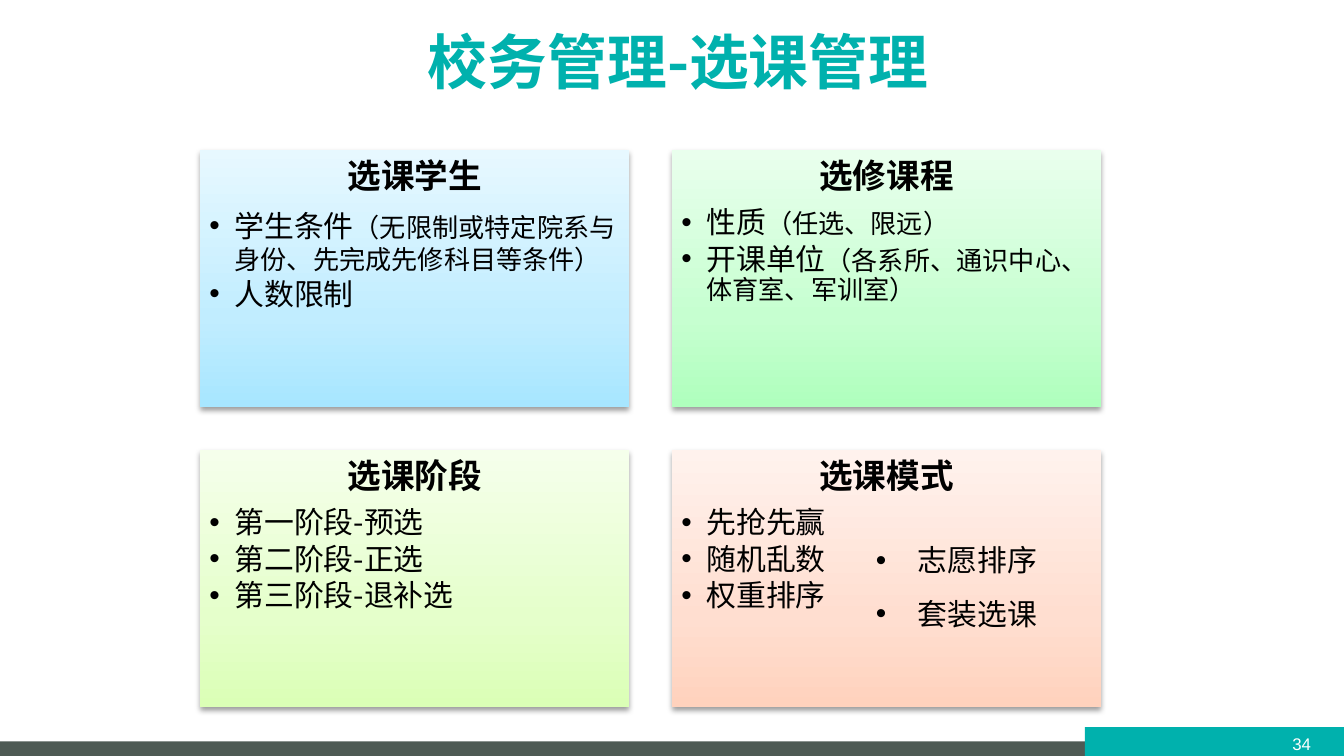
from lxml import etree
from pptx import Presentation
from pptx.dml.color import RGBColor
from pptx.enum.shapes import MSO_SHAPE
from pptx.enum.text import MSO_ANCHOR, MSO_AUTO_SIZE, PP_ALIGN
from pptx.oxml import parse_xml
from pptx.oxml.ns import nsdecls, qn
from pptx.util import Pt

RECT = MSO_SHAPE.RECTANGLE
TOP, MIDDLE = MSO_ANCHOR.TOP, MSO_ANCHOR.MIDDLE
GROW = MSO_AUTO_SIZE.SHAPE_TO_FIT_TEXT
LEFT, CENTER = PP_ALIGN.LEFT, PP_ALIGN.CENTER
SANS, LATIN = "Noto Sans CJK SC", "Arial"
TEAL, GREY, BLACK, WHITE = "00B1AD", "4E5A54", "000000", "FFFFFF"

# Heading, gradient from bottom to top, points as (term, detail)
CARDS = [
    ("选课学生", ("A7E6FF", "C1EDFF", "E7F8FF"),
     [("学生条件", "（无限制或特定院系与身份、先完成先修科目等条件）"),
      ("人数限制", "")]),
    ("选修课程", ("AFFFBD", "C6FFD0", "E9FFED"),
     [("性质", "（任选、限远）"),
      ("开课单位", "（各系所、通识中心、体育室、军训室）")]),
    ("选课阶段", ("DBFFB6", "E5FFCB", "F5FFEB"),
     [("第一阶段-预选", ""), ("第二阶段-正选", ""), ("第三阶段-退补选", "")]),
    ("选课模式", ("FFD2BD", "FFDED0", "FFF2ED"),
     [("先抢先赢", ""), ("随机乱数", ""), ("权重排序", "")]),
]
MODES = ["志愿排序", "套装选课"]


def color(code):
    return RGBColor.from_string(code)


def style(run, size, hue=BLACK, bold=False, face=SANS):
    font = run.font
    font.size, font.bold, font.name = Pt(size), bold, face
    font.color.rgb = color(hue)
    east = etree.SubElement(run._r.get_or_add_rPr(), qn("a:ea"))
    east.set("typeface", face)


def bullet(para, indent):
    props = para._p.get_or_add_pPr()
    props.set("marL", str(Pt(indent)))
    props.set("indent", str(-Pt(indent)))
    etree.SubElement(props, qn("a:buFont")).set("typeface", LATIN)
    etree.SubElement(props, qn("a:buChar")).set("char", "•")


def bar(slide, x, y, w, h):
    """Add a rectangle without outline or shadow."""
    shape = slide.shapes.add_shape(RECT, Pt(x), Pt(y), Pt(w), Pt(h))
    shape.shadow.inherit = False
    shape.line.fill.background()
    return shape


def strip(slide, x, y, w, h, hue):
    shape = bar(slide, x, y, w, h)
    shape.fill.solid()
    shape.fill.fore_color.rgb = color(hue)


def shade(shape, hues):
    """Give the shape an upward gradient and a soft drop shadow."""
    stops = "".join(
        f'<a:gs pos="{pos}"><a:srgbClr val="{hue}"/></a:gs>'
        for pos, hue in zip((0, 35000, 100000), hues))
    props = shape._element.spPr
    props.find(qn("a:prstGeom")).addnext(parse_xml(
        f'<a:gradFill {nsdecls("a")} rotWithShape="1"><a:gsLst>{stops}</a:gsLst>'
        '<a:lin ang="16200000" scaled="0"/></a:gradFill>'))
    props.find(qn("a:effectLst")).append(parse_xml(
        f'<a:outerShdw {nsdecls("a")} blurRad="{Pt(3.1)}" dist="{Pt(1.6)}" '
        'dir="5400000" rotWithShape="0"><a:srgbClr val="000000">'
        '<a:alpha val="38000"/></a:srgbClr></a:outerShdw>'))


def label(slide, x, y, w, h, text, size, hue, bold=False, face=SANS):
    """Add one centred line of text."""
    box = slide.shapes.add_textbox(Pt(x), Pt(y), Pt(w), Pt(h))
    frame = box.text_frame
    frame.word_wrap = True
    frame.vertical_anchor = MIDDLE
    frame.text = text
    para = frame.paragraphs[0]
    para.alignment = CENTER
    style(para.runs[0], size, hue, bold, face)


def card(slide, x, y, w, h, head, hues, items):
    shape = bar(slide, x, y, w, h)
    shade(shape, hues)
    frame = shape.text_frame
    frame.word_wrap = True
    frame.vertical_anchor = TOP
    frame.margin_left = frame.margin_right = Pt(5)
    frame.margin_top = frame.margin_bottom = Pt(5)
    frame.text = head
    para = frame.paragraphs[0]
    para.alignment, para.line_spacing, para.space_after = CENTER, 0.9, Pt(6.3)
    style(para.runs[0], 18, bold=True)
    for term, detail in items:
        para = frame.add_paragraph()
        para.text = term
        para.level, para.alignment = 1, LEFT
        bullet(para, 13.5)
        # A long detail gets full line height
        para.line_spacing = 1.0 if len(detail) > 20 else 0.9
        para.space_after = Pt(2.4)
        style(para.runs[0], 16)
        if detail:
            run = para.add_run()
            run.text = detail
            style(run, 14)


def listing(slide, x, y, w, h, items):
    box = slide.shapes.add_textbox(Pt(x), Pt(y), Pt(w), Pt(h))
    frame = box.text_frame
    frame.word_wrap = True
    frame.auto_size = GROW
    frame.text = "\n".join(items)
    for para in frame.paragraphs:
        bullet(para, 22.5)
        para.line_spacing = 1.5
        style(para.runs[0], 16)


def main():
    deck = Presentation()
    deck.slide_width, deck.slide_height = Pt(720), Pt(405)
    slide = deck.slides.add_slide(deck.slide_layouts[6])
    strip(slide, 0, 397.2, 720, 7.8, GREY)
    strip(slide, 581.2, 389.6, 138.8, 15.4, TEAL)
    label(slide, 677.5, 387.6, 39.6, 21.6, "34", 9, WHITE, face=LATIN)
    label(slide, 42.5, -1.4, 641.5, 67.7, "校务管理-选课管理", 32, TEAL, True)
    for i, (head, hues, items) in enumerate(CARDS):
        row, col = divmod(i, 2)
        card(slide, 107.2 + 252.8 * col, 80.5 + 160.8 * row, 229.8, 137.6,
             head, hues, items)
    listing(slide, 462.2, 277.2, 124.6, 65.5, MODES)
    deck.save("out.pptx")


if __name__ == "__main__":
    main()
